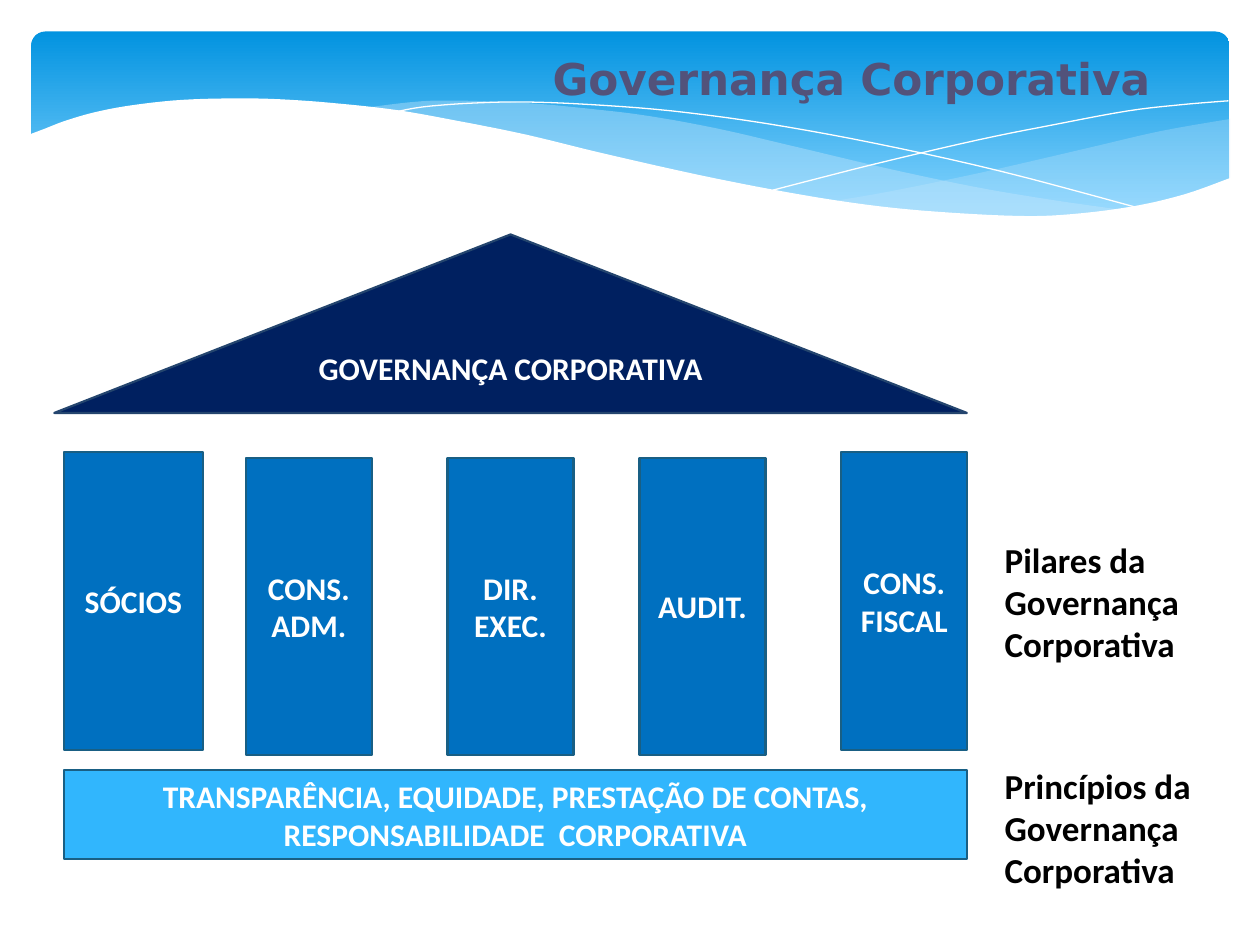
from lxml import etree
from pptx import Presentation
from pptx.dml.color import RGBColor
from pptx.enum.shapes import MSO_SHAPE
from pptx.enum.text import MSO_ANCHOR, PP_ALIGN
from pptx.oxml.ns import qn
from pptx.util import Pt

RECTANGLE = MSO_SHAPE.RECTANGLE
ROUNDED = MSO_SHAPE.ROUNDED_RECTANGLE
TRIANGLE = MSO_SHAPE.ISOSCELES_TRIANGLE
MIDDLE, TOP = MSO_ANCHOR.MIDDLE, MSO_ANCHOR.TOP
CENTER, LEFT = PP_ALIGN.CENTER, PP_ALIGN.LEFT

WHITE = RGBColor(0xFF, 0xFF, 0xFF)
BLACK = RGBColor(0x00, 0x00, 0x00)
TITLE_GREY = RGBColor(0x52, 0x52, 0x7A)
NAVY = RGBColor(0x00, 0x20, 0x60)
NAVY_EDGE = RGBColor(0x24, 0x45, 0x6E)
PILLAR_BLUE = RGBColor(0x00, 0x70, 0xC0)
BASE_BLUE = RGBColor(0x31, 0xB6, 0xFD)
BLUE_EDGE = RGBColor(0x19, 0x5F, 0x84)
BANNER_TOP = RGBColor(0x02, 0x93, 0xE0)
BANNER_BOTTOM = RGBColor(0x83, 0xD3, 0xFE)
VEIL = RGBColor(0xC6, 0xE7, 0xFC)

LABEL = {"name": "Calibri", "size": Pt(18), "bold": True}
SIDE_NOTE = {"name": "Calibri", "size": Pt(20), "bold": True}
TITLE = {"name": "DejaVu Sans", "size": Pt(25), "bold": True}

RIGHT_VEIL = [
    [(703, 68), (663, 75), (620, 85), (561, 98.6), (508, 109.5), (476, 115)],
    [(476, 115), (508, 119), (545, 122.4), (578, 124), (608, 123), (634, 120.5),
     (663, 115), (683, 109.4), (703, 101.5)],
]
LONG_VEIL = [
    [(643, 120.2), (602.6, 114.5), (558, 107), (508, 96.5), (453, 83.5), (410, 73.5),
     (370, 66.2), (335, 62), (302, 59), (260, 57.5), (236, 58.3), (206, 62)],
    [(206, 62), (246, 67.5), (291, 76.3), (353.5, 90.7), (407.5, 103), (456.5, 112.3),
     (500.4, 118.8), (538.6, 122.4), (581, 124.5), (610.5, 123.8), (643, 120.2)],
]
FALLING_LINE = [
    [(222.5, 64.8), (241, 61.2), (269, 59), (299.5, 58.3), (337.7, 59.8),
     (383.8, 63.4), (437.8, 70.6), (500.4, 82), (572.4, 98), (653, 119.5)],
]
RISING_LINE = [
    [(441.4, 108.7), (500.4, 93.6), (558.7, 80), (602, 71.3), (644.4, 63.4),
     (675.4, 59.8), (702, 57.6)],
]
WHITE_WAVE = [
    [(703.4, 101.5), (677, 111), (647, 118), (612, 122.4), (582.5, 123.4),
     (535.7, 121), (495.4, 117), (450.7, 110), (399.6, 100), (342, 87), (301, 77),
     (262.8, 69.3), (227.5, 63), (195, 59.3), (165.6, 57), (139, 56.2), (105, 57),
     (76.3, 60), (54.7, 64), (37.4, 69), (26, 73.4), (16.5, 77)],
    [(16.5, 77), (16.5, 161)],
    [(16.5, 161), (703.4, 161)],
]

PILLARS = [
    ("SÓCIOS", 36.5, 258.5, 79.5),
    ("CONS.\nADM.", 140.5, 261.5, 72),
    ("DIR.\nEXEC.", 255.75, 261.5, 72),
    ("AUDIT.", 365.5, 261.5, 72),
    ("CONS.\nFISCAL", 480.75, 258.5, 72),
]


def smooth(knots, steps=5):
    padded = [knots[0], *knots, knots[-1]]
    points = [knots[0]]
    for a, b, c, d in zip(padded, padded[1:], padded[2:], padded[3:]):
        for step in range(1, steps + 1):
            t = step / steps
            points.append(tuple(
                (2 * q + (r - p) * t + (2 * p - 5 * q + 4 * r - s) * t ** 2
                 + (3 * q - p - 3 * r + s) * t ** 3) / 2
                for p, q, r, s in zip(a, b, c, d)))
    return points


class SlideBuilder:
    def __init__(self, slide):
        self.slide = slide

    def paint(self, shape, fill=None, line=None, width=1.25, opacity=100):
        shape.shadow.inherit = False
        if fill is None:
            shape.fill.background()
        else:
            shape.fill.solid()
            shape.fill.fore_color.rgb = fill
        if opacity < 100:
            color = shape._element.spPr.find(".//" + qn("a:srgbClr"))
            etree.SubElement(color, qn("a:alpha")).set("val", str(opacity * 1000))
        if line is None:
            shape.line.fill.background()
        else:
            shape.line.color.rgb = line
            shape.line.width = Pt(width)

    def set_text(self, shape, text, style, color, align, anchor, wrap):
        frame = shape.text_frame
        frame.text = text
        frame.word_wrap = wrap
        frame.vertical_anchor = anchor
        for paragraph in frame.paragraphs:
            paragraph.alignment = align
            for run in paragraph.runs:
                for name, value in style.items():
                    setattr(run.font, name, value)
                run.font.color.rgb = color

    def block(self, kind, box, text, fill, line, wrap=True):
        shape = self.slide.shapes.add_shape(kind, *map(Pt, box))
        self.paint(shape, fill, line)
        self.set_text(shape, text, LABEL, WHITE, CENTER, MIDDLE, wrap)

    def text(self, box, text, style, color, align=LEFT, wrap=False):
        shape = self.slide.shapes.add_textbox(*map(Pt, box))
        self.set_text(shape, text, style, color, align, TOP, wrap)

    def banner(self, box):
        shape = self.slide.shapes.add_shape(ROUNDED, *map(Pt, box))
        self.paint(shape)
        shape.adjustments[0] = 0.07
        shape.fill.gradient()
        shape.fill.gradient_angle = 270
        stops = [(0, BANNER_TOP), (0.9, BANNER_BOTTOM)]
        for stop, (position, color) in zip(shape.fill.gradient_stops, stops):
            stop.position = position
            stop.color.rgb = color

    def wave(self, curves, closed=True, **paint):
        points = [(Pt(x), Pt(y)) for curve in curves for x, y in smooth(curve)]
        builder = self.slide.shapes.build_freeform(*points[0])
        builder.add_line_segments(points[1:], close=closed)
        self.paint(builder.convert_to_shape(), **paint)


def main():
    presentation = Presentation()
    presentation.slide_width = Pt(720)
    presentation.slide_height = Pt(540)
    builder = SlideBuilder(presentation.slides.add_slide(presentation.slide_layouts[6]))

    builder.banner((18, 18, 684.5, 112.5))
    builder.wave(RIGHT_VEIL, fill=VEIL, opacity=29)
    builder.wave(LONG_VEIL, fill=VEIL, opacity=40)
    for curves in (FALLING_LINE, RISING_LINE):
        builder.wave(curves, closed=False, line=WHITE, width=0)
    builder.wave(WHITE_WAVE, fill=WHITE)

    builder.text((273, 26, 427, 37.5), "Governança Corporativa", TITLE, TITLE_GREY,
                 CENTER, True)
    builder.block(TRIANGLE, (31, 134, 521.5, 102), "GOVERNANÇA CORPORATIVA",
                  NAVY, NAVY_EDGE, False)
    for text, left, top, width in PILLARS:
        builder.block(RECTANGLE, (left, top, width, 170), text, PILLAR_BLUE, BLUE_EDGE)
    builder.block(RECTANGLE, (36.5, 440, 516, 51),
                  "TRANSPARÊNCIA, EQUIDADE, PRESTAÇÃO DE CONTAS,\n"
                  "RESPONSABILIDADE  CORPORATIVA", BASE_BLUE, BLUE_EDGE)
    for heading, top, width in (("Pilares", 304, 117.5), ("Princípios", 433.5, 125)):
        builder.text((567, top, width, 80), f"{heading} da\nGovernança\nCorporativa",
                     SIDE_NOTE, BLACK)

    presentation.save("out.pptx")


if __name__ == "__main__":
    main()
